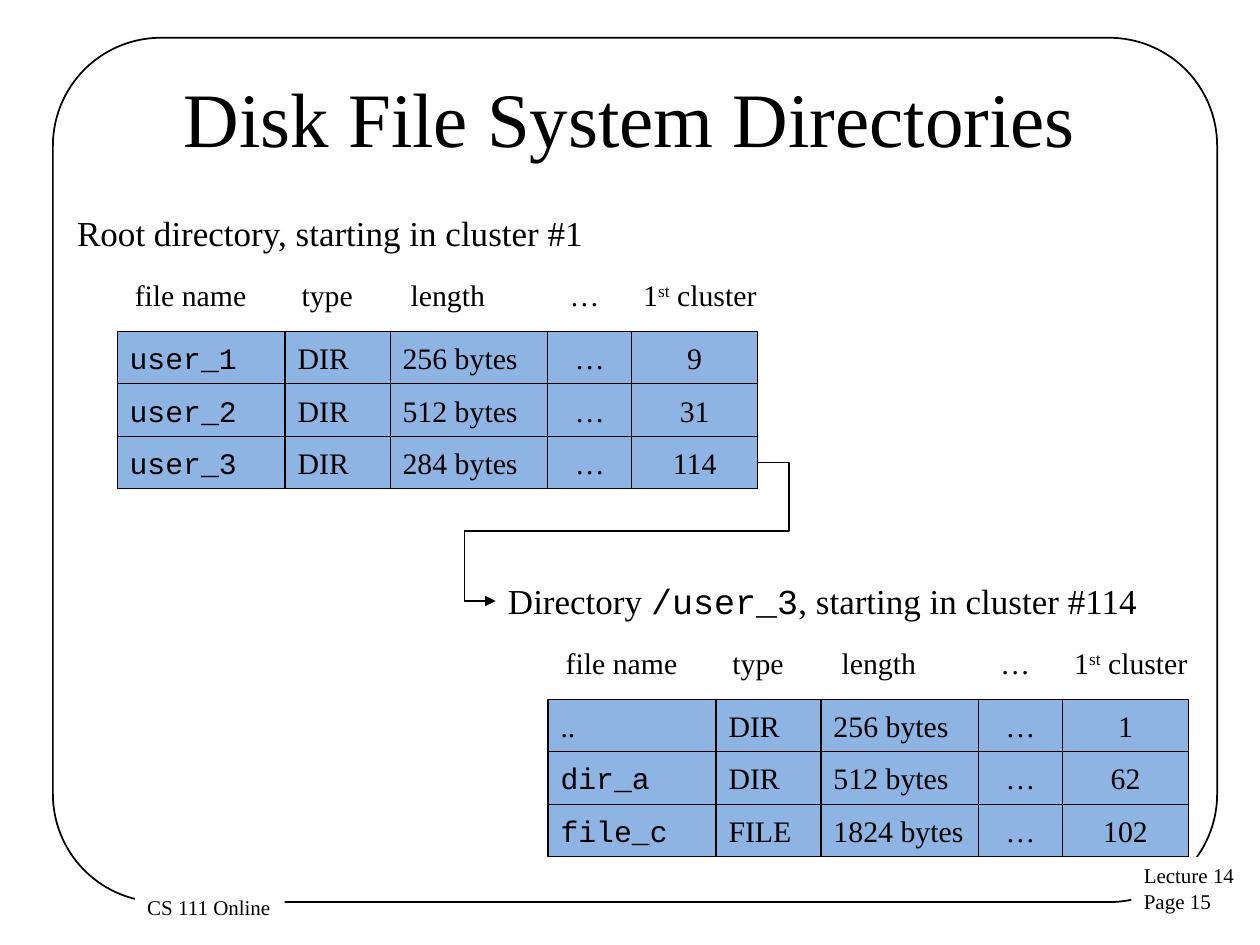
from dataclasses import dataclass
from itertools import accumulate

from lxml import etree
from pptx import Presentation, util as u
from pptx.dml.color import RGBColor
from pptx.enum import shapes, text
from pptx.oxml import ns

COLORS = {"ink": "000000", "cell": "8EB4E3", "paper": "FFFFFF"}
SERIF, MONO = "Times New Roman", "Courier New"
LEFT, CENTER = text.PP_ALIGN.LEFT, text.PP_ALIGN.CENTER
TOP, MIDDLE = text.MSO_ANCHOR.TOP, text.MSO_ANCHOR.MIDDLE
UNIT = 1 / 12
ROW_UNITS = 5


@dataclass(frozen=True)
class Span:
    words: str
    font: str = SERIF
    raised: bool = False


@dataclass(frozen=True)
class Box:
    left: float
    top: float
    width: float
    height: float


@dataclass(frozen=True)
class Style:
    size: float
    align: text.PP_ALIGN = LEFT
    anchor: text.MSO_ANCHOR = TOP
    wrap: bool = False


@dataclass(frozen=True)
class Column:
    units: int
    align: text.PP_ALIGN


@dataclass(frozen=True)
class Heading:
    start: int
    units: int
    spans: tuple[Span, ...]


@dataclass(frozen=True)
class Directory:
    left: float
    top: float
    caption: tuple[Span, ...]
    caption_width: float
    entries: tuple[tuple[Span, ...], ...]


COLUMNS = (Column(16, LEFT), Column(10, LEFT), Column(15, LEFT),
           Column(8, CENTER), Column(12, CENTER))
STARTS = tuple(accumulate((c.units for c in COLUMNS), initial=0))
HEADINGS = (
    Heading(-2, 18, (Span("file name"),)),
    Heading(16, 8, (Span("type"),)),
    Heading(24, 15, (Span("length"),)),
    Heading(41, 7, (Span("…"),)),
    Heading(48, 15, (Span("1"), Span("st", raised=True), Span(" cluster"))),
)


def entry(name: str, kind: str, length: str, cluster: str,
          font: str = MONO) -> tuple[Span, ...]:
    return (Span(name, font), Span(kind), Span(length), Span("…"), Span(cluster))


ROOT = Directory(
    0.93, 2.63, (Span("Root directory, starting in cluster #1"),), 4.25,
    (entry("user_1", "DIR", "256 bytes", "9"),
     entry("user_2", "DIR", "512 bytes", "31"),
     entry("user_3", "DIR", "284 bytes", "114")))
USER = Directory(
    4.35, 5.55,
    (Span("Directory "), Span("/user_3", MONO), Span(", starting in cluster #114")),
    5.23,
    (entry("..", "DIR", "256 bytes", "1", SERIF),
     entry("dir_a", "DIR", "512 bytes", "62"),
     entry("file_c", "FILE", "1824 bytes", "102")))


def rgb(name: str) -> RGBColor:
    return RGBColor.from_string(COLORS[name])


def write(shape, lines, style: Style) -> None:
    frame = shape.text_frame
    frame.word_wrap = style.wrap
    frame.vertical_anchor = style.anchor
    for number, spans in enumerate(lines):
        paragraph = frame.add_paragraph() if number else frame.paragraphs[0]
        paragraph.alignment = style.align
        for span in spans:
            run = paragraph.add_run()
            run.text = span.words
            run.font.name = span.font
            run.font.size = u.Pt(style.size)
            run.font.color.rgb = rgb("ink")
            if span.raised:
                run.font._element.set("baseline", "30000")


def inches(box: Box) -> tuple[u.Inches, ...]:
    return tuple(u.Inches(v) for v in (box.left, box.top, box.width, box.height))


def add_label(slide, box: Box, lines, style: Style) -> None:
    write(slide.shapes.add_textbox(*inches(box)), lines, style)


def add_panel(slide, box: Box, fill: str = "", line: float = 0,
              kind=shapes.MSO_SHAPE.RECTANGLE):
    panel = slide.shapes.add_shape(kind, *inches(box))
    panel.shadow.inherit = False
    if fill:
        panel.fill.solid()
        panel.fill.fore_color.rgb = rgb(fill)
    else:
        panel.fill.background()
    if line:
        panel.line.color.rgb = rgb("ink")
        panel.line.width = u.Pt(line)
    else:
        panel.line.fill.background()
    return panel


def draw_directory(slide, directory: Directory) -> None:
    def place(column: int, row: float, units: int) -> Box:
        return Box(directory.left + column * UNIT, directory.top + row * UNIT,
                   units * UNIT, ROW_UNITS * UNIT)

    caption = Box(directory.left - ROW_UNITS * UNIT, directory.top - 1,
                  directory.caption_width, 0.44)
    add_label(slide, caption, [directory.caption], Style(20))
    for heading in HEADINGS:
        add_label(slide, place(heading.start, -6, heading.units),
                  [heading.spans], Style(17, CENTER, MIDDLE))
    for row, spans in enumerate(directory.entries):
        for start, column, span in zip(STARTS, COLUMNS, spans):
            cell = add_panel(slide, place(start, row * ROW_UNITS, column.units),
                             "cell", 0.75)
            write(cell, [[span]], Style(17, column.align, MIDDLE))


def draw_link(slide, source: Directory, target: Directory) -> None:
    last_row = len(source.entries) - 0.5
    link = slide.shapes.add_connector(
        shapes.MSO_CONNECTOR.ELBOW,
        u.Inches(source.left + STARTS[-1] * UNIT),
        u.Inches(source.top + last_row * ROW_UNITS * UNIT),
        u.Inches(target.left - ROW_UNITS * UNIT),
        u.Inches(target.top - 0.78))
    link.line.color.rgb = rgb("ink")
    link.line.width = u.Pt(0.75)
    properties = link._element.spPr
    geometry = properties.find(ns.qn("a:prstGeom"))
    geometry.set("prst", "bentConnector5")
    guides = geometry.find(ns.qn("a:avLst"))
    for number, share in enumerate((-12000, 49500, 112000), 1):
        etree.SubElement(guides, ns.qn("a:gd"), name=f"adj{number}",
                         fmla=f"val {share}")
    etree.SubElement(properties.find(ns.qn("a:ln")), ns.qn("a:tailEnd"),
                     type="triangle")
    etree.SubElement(properties, ns.qn("a:effectLst"))


def main() -> None:
    deck = Presentation()
    deck.slide_width, deck.slide_height = u.Inches(10), u.Inches(7.5)
    slide = deck.slides.add_slide(deck.slide_layouts[6])
    border = add_panel(slide, Box(0.42, 0.3, 9.24, 6.86), line=1,
                       kind=shapes.MSO_SHAPE.ROUNDED_RECTANGLE)
    border.adjustments[0] = 0.125
    footers = (
        (Box(8.98, 6.8, 0.93, 0.51), ("Lecture 14", "Page 15")),
        (Box(1.07, 7.05, 1.19, 0.3), ("CS 111 Online",)),
    )
    for box, lines in footers:
        write(add_panel(slide, box, "paper"), [[Span(line)] for line in lines],
              Style(12))
    add_label(slide, Box(0.5, 0.3, 9, 1.25), [[Span("Disk File System Directories")]],
              Style(44, CENTER, MIDDLE, True))
    draw_directory(slide, ROOT)
    draw_link(slide, ROOT, USER)
    draw_directory(slide, USER)
    deck.save("out.pptx")


if __name__ == "__main__":
    main()
